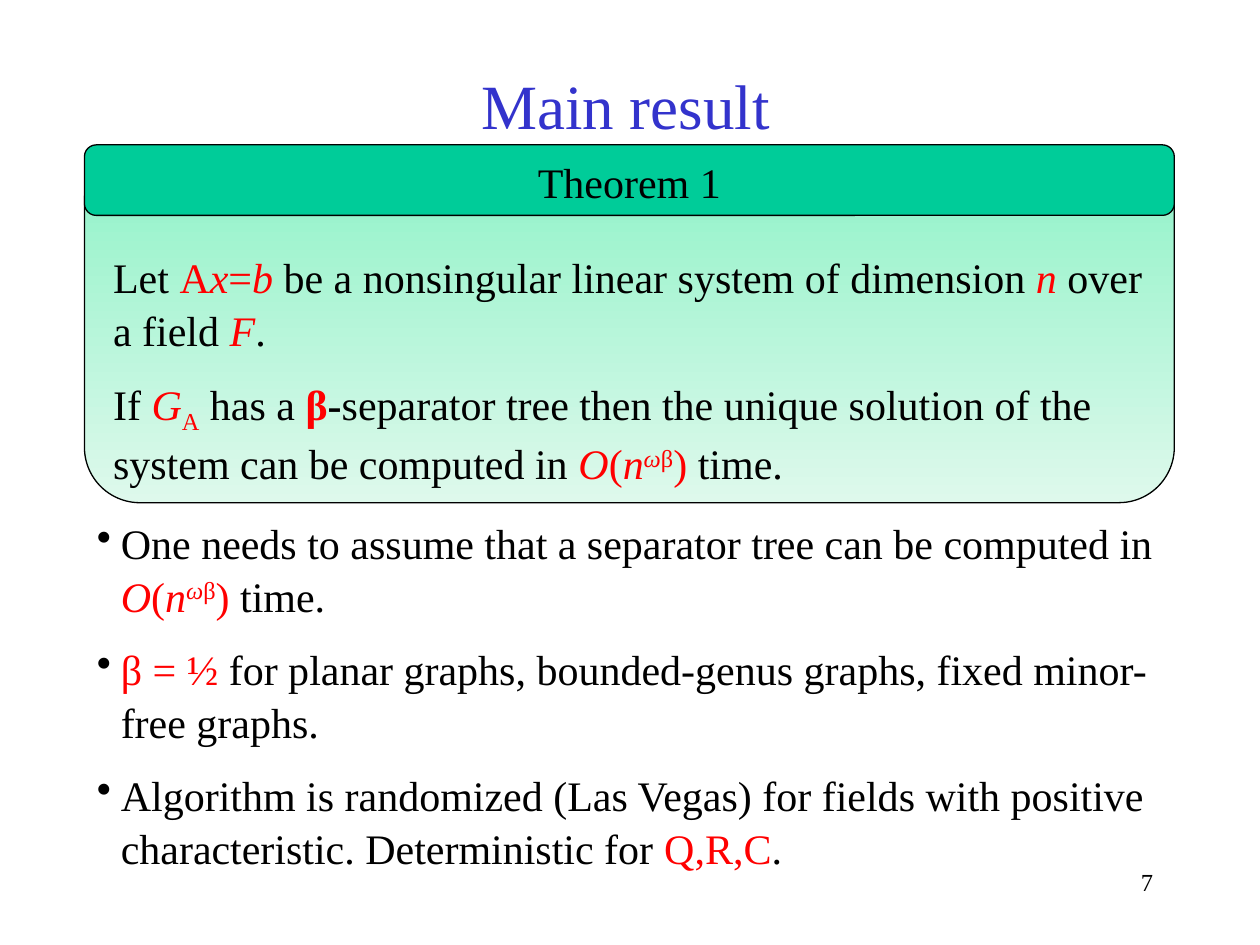
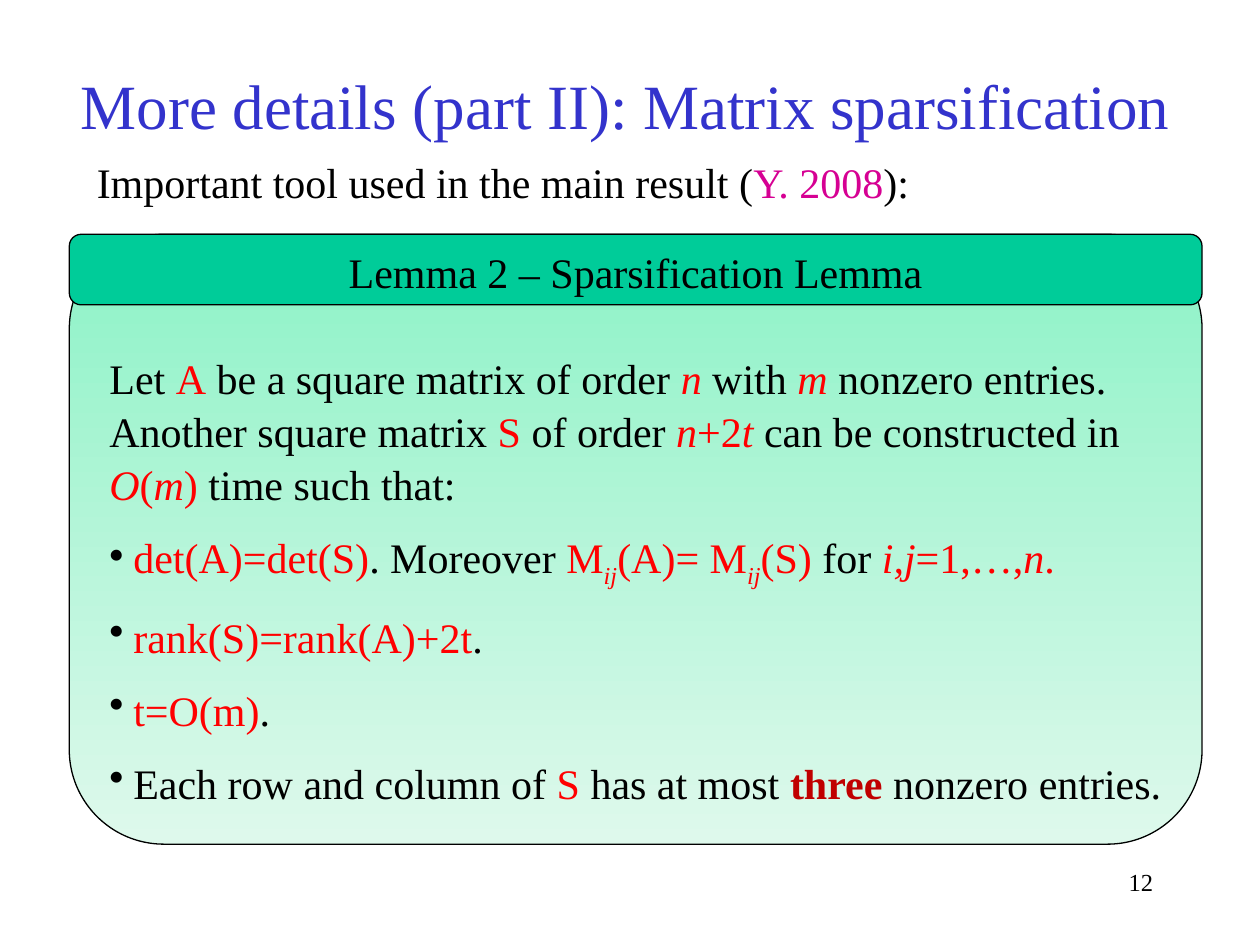
from typing import NamedTuple

from lxml.etree import SubElement
from pptx import Presentation
from pptx.dml.color import RGBColor
from pptx.enum.shapes import MSO_SHAPE as Shape
from pptx.enum.text import MSO_ANCHOR as Anchor, PP_ALIGN as Align
from pptx.oxml.ns import qn
from pptx.util import Inches, Pt

FONT = "Times New Roman"
BLACK = RGBColor(0x00, 0x00, 0x00)
TITLE_BLUE = RGBColor(0x33, 0x33, 0xCC)
HEADER_GREEN = RGBColor(0x00, 0xCC, 0x99)
PANEL_TOP = RGBColor(0x8C, 0xF2, 0xC6)
PANEL_BOTTOM = RGBColor(0xDE, 0xF9, 0xEC)
# Letters that mark the colour of a span
SPAN_COLORS = {
    "r": RGBColor(0xFF, 0x00, 0x00),
    "d": RGBColor(0xC0, 0x00, 0x00),
    "m": RGBColor(0xD6, 0x00, 0x93),
}
# Marks that raise or lower a span, in thousandths of a percent
BASELINES = {"^": "30000", "_": "-25000"}

# The page is a grid of 100 columns and 75 rows
WIDTH, HEIGHT = Inches(10), Inches(7.5)
COLUMN, ROW = WIDTH // 100, HEIGHT // 75
BODY_SIZE, LINE_SPACING, PARA_GAP = Pt(24), 1.05, Pt(11.5)
HANGING = Inches(0.19)
PANEL_ROUNDING = 0.155
HEADER_ROWS = 5.6


class Box(NamedTuple):
    """A region in grid columns and rows."""
    left: float
    top: float
    width: float
    height: float

    def lengths(self):
        return (int(self.left * COLUMN), int(self.top * ROW),
                int(self.width * COLUMN), int(self.height * ROW))


TITLE_BOX = Box(4.6, 4.6, 90.1, 7.3)
NUMBER_BOX = Box(71.7, 68.3, 20.8, 5)

# A span is plain text, or a pair of text and marks:
# r, d, m colour; i italic; b bold; ^ raised; _ lowered
RUNNING_TIME = [("O", "ri"), ("(", "r"), ("n", "ri"), ("ω", "ri^"),
                ("β", "r^"), (") ", "r"), "time."]

THEOREM = [
    ["Let ", ("A", "r"), ("x", "ri"), ("=", "r"), ("b ", "ri"),
     "be a nonsingular linear system of dimension ", ("n", "ri"),
     " over a field ", ("F", "ri"), "."],
    ["If ", ("G", "ri"), ("A", "r_"), " has a ", ("β", "rb"), ("-", "b"),
     "separator tree then the unique solution of the system can be computed in ",
     *RUNNING_TIME],
]
REMARKS = [
    ["One needs to assume that a separator tree can be computed in ",
     *RUNNING_TIME],
    [("β = ½ ", "r"),
     "for planar graphs, bounded-genus graphs, fixed minor-free graphs."],
    ["Algorithm is randomized (Las Vegas) for fields with positive "
     "characteristic. Deterministic for ", ("Q,R,C", "r"), "."],
]
LEAD_IN = [["Important tool used in the main result (", ("Y. 2008", "m"), "):"]]
LEMMA = [
    ["Let ", ("A", "r"), " be a square matrix of order ", ("n", "ri"),
     " with ", ("m", "ri"), " nonzero entries. Another square matrix ",
     ("S", "r"), " of order ", ("n", "ri"), ("+2", "r"), ("t ", "ri"),
     "can be constructed in ", ("O", "ri"), ("(", "r"), ("m", "ri"),
     (") ", "r"), "time such that:"],
    [("det(A)=det(S)", "r"), ". Moreover ", ("M", "r"), ("ij", "ri_"),
     ("(A)= M", "r"), ("ij", "ri_"), ("(S) ", "r"), "for ", ("i,j", "ri"),
     ("=1,…,", "r"), ("n", "ri"), (".", "r")],
    [("rank(S)=rank(A)+2t", "r"), "."],
    [("t=O(m)", "r"), "."],
    ["Each row and column of ", ("S", "r"), " has at most ", ("three", "db"),
     " nonzero entries."],
]


def style_para(para, size, color=BLACK, align=Align.LEFT):
    para.alignment = align
    para.font.name, para.font.size = FONT, size
    para.font.color.rgb = color


def add_bullet(para):
    props = para._p.get_or_add_pPr()
    props.set("marL", str(HANGING))
    props.set("indent", str(-HANGING))
    bullet = SubElement(props, qn("a:buChar"))
    bullet.set("char", "•")
    # The bullet goes ahead of the default run properties
    props.find(qn("a:defRPr")).addprevious(bullet)
    color = SubElement(props, qn("a:buClr"))
    SubElement(color, qn("a:srgbClr")).set("val", str(BLACK))
    bullet.addprevious(color)


def add_span(para, text, marks=""):
    span = para.add_run()
    span.text = text
    font = span.font
    font.name, font.size = FONT, para.font.size
    font.color.rgb = SPAN_COLORS.get(marks[:1], para.font.color.rgb)
    font.italic, font.bold = "i" in marks, "b" in marks
    for mark, baseline in BASELINES.items():
        if mark in marks:
            span._r.get_or_add_rPr().set("baseline", baseline)


def write_paras(frame, paras, first_bullet):
    """Fill a frame with rich text, bulleted from the given paragraph on."""
    frame.word_wrap = True
    frame.vertical_anchor = Anchor.TOP
    for index, spans in enumerate(paras):
        para = frame.add_paragraph() if index else frame.paragraphs[0]
        style_para(para, BODY_SIZE)
        para.line_spacing = LINE_SPACING
        para.space_before = PARA_GAP if index else Pt(0)
        if index >= first_bullet:
            add_bullet(para)
        for span in spans:
            add_span(para, *([span] if isinstance(span, str) else span))


def add_line_of_text(page, box, text, size, color, align, anchor):
    frame = page.shapes.add_textbox(*box.lengths()).text_frame
    frame.word_wrap = True
    frame.vertical_anchor = anchor
    para = frame.paragraphs[0]
    style_para(para, size, color, align)
    add_span(para, text)


def add_body(page, box, paras, first_bullet):
    frame = page.shapes.add_textbox(*box.lengths()).text_frame
    write_paras(frame, paras, first_bullet)


def add_rounded(page, box):
    shape = page.shapes.add_shape(Shape.ROUNDED_RECTANGLE, *box.lengths())
    shape.shadow.inherit = False
    shape.line.color.rgb, shape.line.width = BLACK, Pt(0.75)
    return shape


def add_statement(page, box, heading, paras, first_bullet):
    """A gradient panel with a heading band along its top edge."""
    panel = add_rounded(page, box)
    panel.adjustments[0] = PANEL_ROUNDING
    panel.fill.gradient()
    panel.fill.gradient_angle = 270
    for stop, color in zip(panel.fill.gradient_stops, (PANEL_TOP, PANEL_BOTTOM)):
        stop.color.rgb = color
    panel.text_frame.margin_top = 7 * ROW
    write_paras(panel.text_frame, paras, first_bullet)

    band = add_rounded(page, box._replace(height=HEADER_ROWS))
    band.fill.solid()
    band.fill.fore_color.rgb = HEADER_GREEN
    write_paras(band.text_frame, [[heading]], first_bullet=1)
    band.text_frame.paragraphs[0].alignment = Align.CENTER


def add_page(deck, title, number):
    """A blank page with the shared title and page number."""
    page = deck.slides.add_slide(deck.slide_layouts[6])
    add_line_of_text(page, NUMBER_BOX, number, Pt(14), BLACK,
                     Align.RIGHT, Anchor.TOP)
    add_line_of_text(page, TITLE_BOX, title, Pt(36), TITLE_BLUE,
                     Align.CENTER, Anchor.MIDDLE)
    return page


def add_main_result(deck):
    page = add_page(deck, "Main result", "7")
    add_body(page, Box(6.7, 40.4, 86.5, 29.3), REMARKS, first_bullet=0)
    add_statement(page, Box(6.7, 11.5, 86.5, 28.4), "Theorem 1", THEOREM,
                  first_bullet=len(THEOREM))


def add_sparsification(deck):
    page = add_page(deck, "More details (part II): Matrix sparsification", "12")
    add_body(page, Box(6.7, 11.7, 86.4, 5), LEAD_IN, first_bullet=1)
    add_statement(page, Box(5.5, 18.6, 89.9, 48.4),
                  "Lemma 2 – Sparsification Lemma", LEMMA, first_bullet=1)


def main():
    deck = Presentation()
    deck.slide_width, deck.slide_height = WIDTH, HEIGHT
    add_main_result(deck)
    add_sparsification(deck)
    deck.save("out.pptx")


if __name__ == "__main__":
    main()
